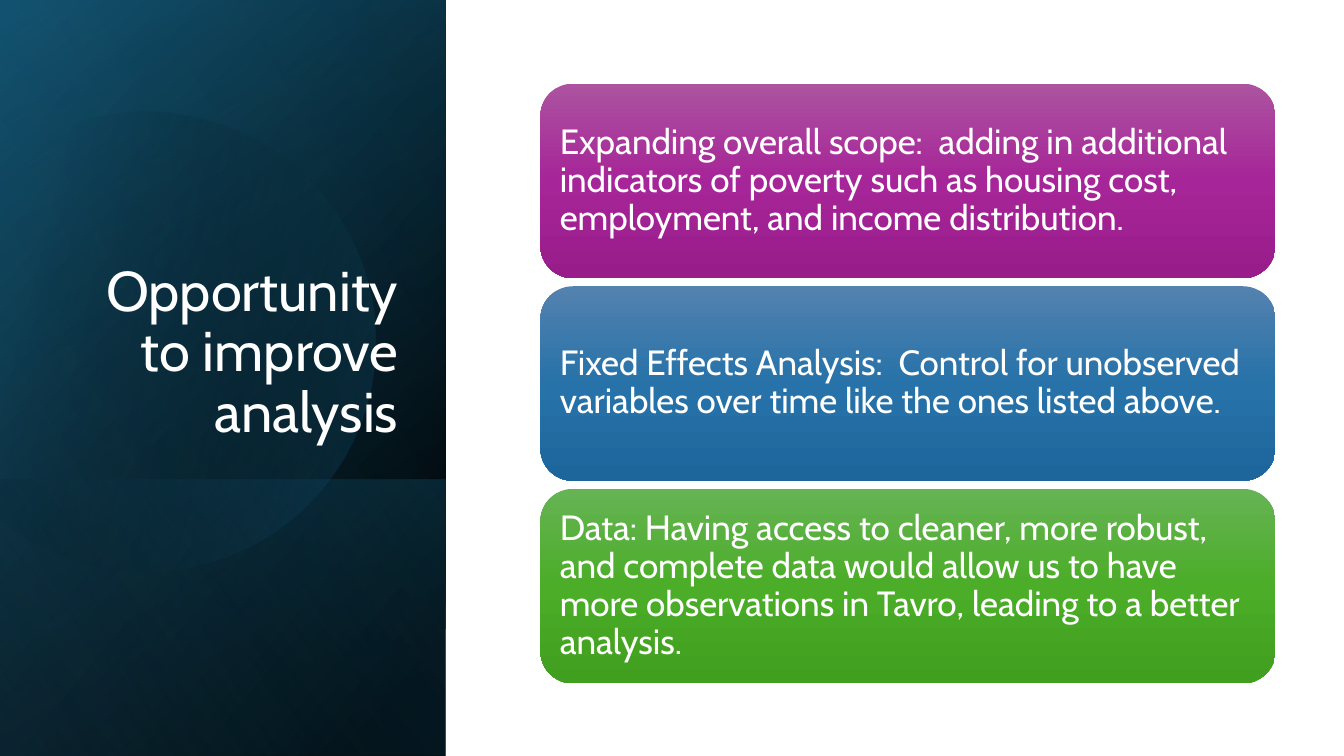
from math import cos, sin, radians
from lxml import etree
from pptx import Presentation
from pptx.dml.color import RGBColor
from pptx.enum.shapes import MSO_SHAPE as Kind
from pptx.enum.text import MSO_ANCHOR as Anchor, MSO_AUTO_SIZE as Fit, PP_ALIGN as Align
from pptx.oxml import parse_xml
from pptx.util import Inches, Pt

NS = "http://schemas.openxmlformats.org/drawingml/2006/main"


def paint(shape, angle, stops):
    """Gradient fill; each stop is (place %, colour, opacity %)."""
    shape.shadow.inherit = False
    shape.line.fill.background()
    shape.fill.solid()
    grad = parse_xml(f'<a:gradFill xmlns:a="{NS}" rotWithShape="1"><a:gsLst/>'
                     f'<a:lin ang="{angle * 60000}" scaled="0"/></a:gradFill>')
    for place, color, alpha in stops:
        stop = etree.SubElement(grad[0], f"{{{NS}}}gs", pos=str(place * 1000))
        tint = etree.SubElement(stop, f"{{{NS}}}srgbClr", val=color)
        if alpha < 100:
            etree.SubElement(tint, f"{{{NS}}}alpha", val=str(alpha * 1000))
    flat = shape._element.spPr.find(f"{{{NS}}}solidFill")
    flat.getparent().replace(flat, grad)


def write(para, text, size):
    """Add one white run."""
    para.line_spacing = 0.9
    run = para.add_run()
    run.text = text
    run.font.name = "Cabin"
    run.font.size = Pt(size)
    run.font.color.rgb = RGBColor.from_string("FFFFFF")


deck = Presentation()
deck.slide_width, deck.slide_height = Inches(13.33), Inches(7.5)
slide = deck.slides.add_slide(deck.slide_layouts[5])
shapes = slide.shapes

# Left panel: layered gradients, each rectangle turned a quarter
full = (-1.54, 1.54, 7.5, 4.42)
foot = (0.84, 3.92, 2.74, 4.42)
layers = [
    (full, 50, [(8, "000000", 100), (100, "104862", 100)]),
    (full, 30, [(0, "000000", 0), (99, "156082", 46)]),
    (foot, 130, [(2, "156082", 29), (100, "000000", 30)]),
    (None, 30, [(29, "000000", 0), (100, "156082", 43)]),
    (full, 120, [(0, "000000", 0), (99, "46B1E1", 11)]),
]
for box, angle, stops in layers:
    if box:
        layer = shapes.add_shape(Kind.RECTANGLE, *map(Inches, box))
        layer.rotation = 90
        layer._element.spPr.xfrm.set("flipH", "1")
    else:
        # Disc with its left side cut off by a chord
        mid_x, mid_y, radius = Inches(1.44), Inches(3.35), Inches(2.28)
        rim = [(mid_x + radius * cos(radians(turn)), mid_y + radius * sin(radians(turn)))
               for turn in range(-118, 151, 4)]
        path = shapes.build_freeform(*rim[0])
        path.add_line_segments(rim[1:], close=True)
        layer = path.convert_to_shape()
        layer.rotation = 343.9
    paint(layer, angle, stops)

# Title, moved in front of the panel
title = shapes.title
shapes._spTree.append(title._element)
title.left, title.top, title.width, title.height = map(Inches, (0.64, 1.84, 3.41, 2.62))
frame = title.text_frame
frame.word_wrap, frame.auto_size = True, Fit.NONE
frame.vertical_anchor = Anchor.BOTTOM
frame.paragraphs[0].alignment = Align.RIGHT
write(frame.paragraphs[0], "Opportunity to improve analysis", 40)

# Three cards in one column
left, top, wide, high, gap = 5.36, 0.83, 7.29, 1.93, 0.08
cards = [
    (("AC53A0", "A62598", "991C8B"),
     "Expanding overall scope:  adding in additional indicators of poverty "
     "such as housing cost, employment, and income distribution."),
    (("5382AF", "2772A9", "1D669C"),
     "Fixed Effects Analysis:  Control for unobserved variables over time "
     "like the ones listed above."),
    (("66B354", "4BAD28", "409F1E"),
     "Data: Having access to cleaner, more robust, and complete data would "
     "allow us to have more observations in Tavro, leading to a better analysis."),
]
for row, (tones, text) in enumerate(cards):
    card = shapes.add_shape(Kind.ROUNDED_RECTANGLE, Inches(left),
                            Inches(top + row * (high + gap)), Inches(wide), Inches(high))
    paint(card, 90, [(spot, tone, 100) for spot, tone in zip((0, 50, 100), tones)])
    frame = card.text_frame
    frame.word_wrap = True
    frame.vertical_anchor = Anchor.MIDDLE
    frame.margin_left = frame.margin_right = Inches(0.1)
    frame.margin_top = frame.margin_bottom = Inches(0.1)
    frame.paragraphs[0].alignment = Align.LEFT
    write(frame.paragraphs[0], text, 25)

deck.save("out.pptx")
